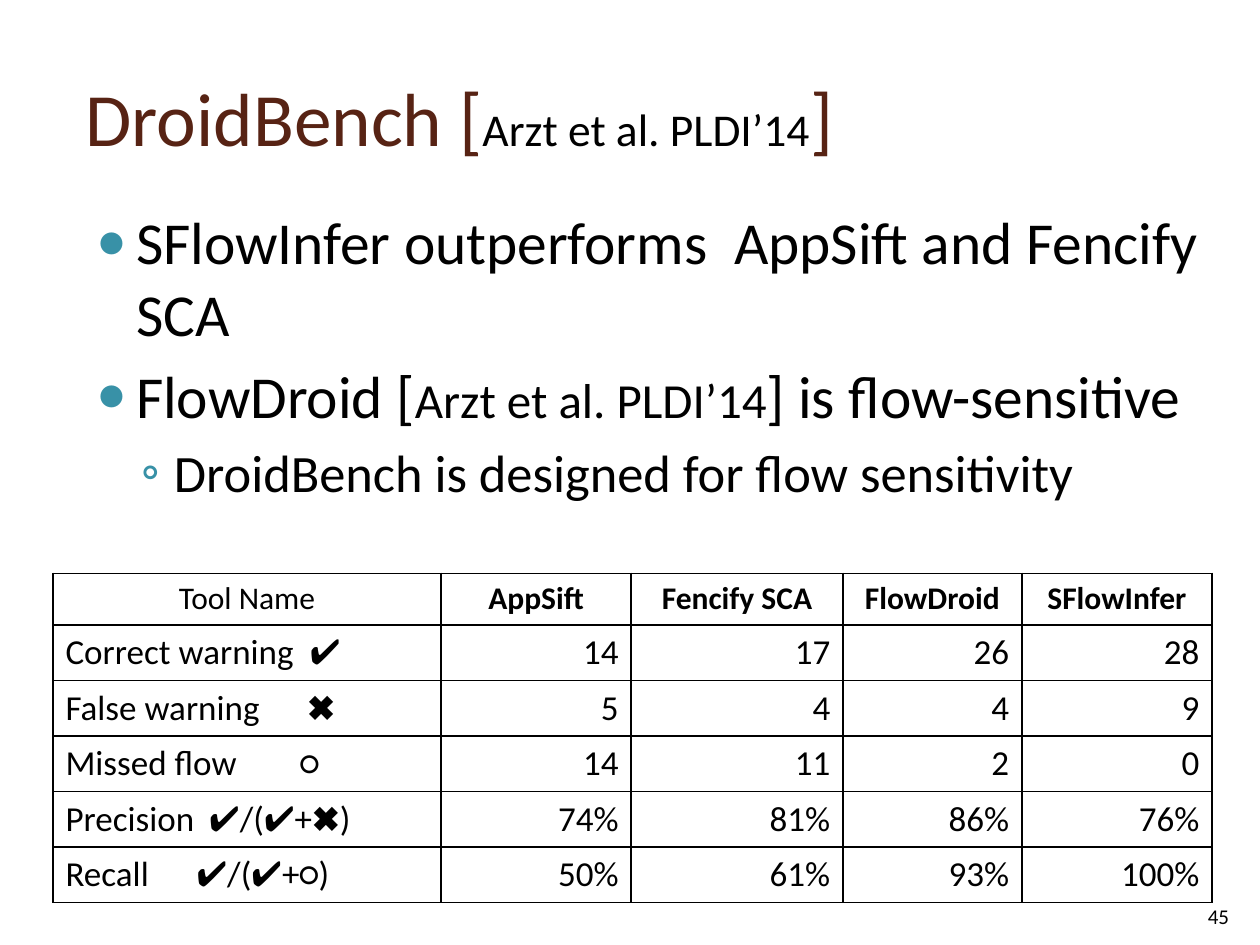
import dataclasses

import pptx
import pptx.dml.color
import pptx.enum.text
import pptx.oxml
import pptx.oxml.ns
import pptx.util
from lxml import etree

ALIGN = pptx.enum.text.PP_ALIGN
ANCHOR = pptx.enum.text.MSO_ANCHOR


@dataclasses.dataclass(frozen=True)
class Theme:
    font: str = "Calibri"
    text: str = "000000"
    heading: str = "572314"
    bullet: str = "3891A7"
    title: int = 43
    title_cite: int = 26
    body: int = 34
    body_cite: int = 28
    sub: int = 30
    header: int = 18
    cell: int = 20
    number: int = 12
    border: float = 1


def add_xml(parent, tag, **attrs):
    """Append one DrawingML element and return it."""
    return etree.SubElement(parent, pptx.oxml.ns.qn("a:" + tag), attrs)


class SlideBuilder:
    """Places elements on a grid of 100 columns by 75 rows."""

    COLS, ROWS = 100, 75

    def __init__(self, prs, theme):
        self.prs, self.theme = prs, theme
        self.slide = prs.slides.add_slide(prs.slide_layouts[1])

    def col(self, n):
        return round(self.prs.slide_width * n / self.COLS)

    def row(self, n):
        return round(self.prs.slide_height * n / self.ROWS)

    def box(self, x, y, w, h):
        return self.col(x), self.row(y), self.col(w), self.row(h)

    def place(self, sp, box, anchor):
        sp.left, sp.top, sp.width, sp.height = self.box(*box)
        tf = sp.text_frame
        tf.word_wrap = True
        tf.auto_size = pptx.enum.text.MSO_AUTO_SIZE.NONE
        tf.vertical_anchor = anchor
        return tf

    def style(self, p, size, align=ALIGN.LEFT, color=None, bold=False):
        p.alignment = align
        for r in p.runs:
            self.style_run(r, size, color, bold)

    def style_run(self, r, size, color=None, bold=False):
        r.font.name = self.theme.font
        r.font.size = pptx.util.Pt(size)
        r.font.bold = bold
        r.font.color.rgb = pptx.dml.color.RGBColor.from_string(color or self.theme.text)

    def add_runs(self, p, parts):
        """Fill a paragraph with (text, size, color) runs."""
        p.alignment = ALIGN.LEFT
        for text, size, color in parts:
            r = p.add_run()
            r.text = text
            self.style_run(r, size, color)

    def title(self, parts, box):
        tf = self.place(self.slide.shapes.title, box, ANCHOR.MIDDLE)
        self.add_runs(tf.paragraphs[0], parts)

    def bullets(self, items, box):
        tf = self.place(self.slide.placeholders[1], box, ANCHOR.TOP)
        # Per level: indent, hanging columns, space before, sign, sign size
        levels = [(4, 3.1, 6, "●", 80), (7, 2.6, 5.5, "◦", 100)]
        for i, (level, parts) in enumerate(items):
            indent, hang, before, sign, percent = levels[level]
            p = tf.add_paragraph() if i else tf.paragraphs[0]
            self.add_runs(p, parts)
            p.level = level
            p.space_before = pptx.util.Pt(before)
            pPr = p._p.get_or_add_pPr()
            pPr.set("marL", str(self.col(indent)))
            pPr.set("indent", str(-self.col(hang)))
            add_xml(add_xml(pPr, "buClr"), "srgbClr", val=self.theme.bullet)
            add_xml(pPr, "buSzPct", val=str(percent * 1000))
            add_xml(pPr, "buFont", typeface=self.theme.font)
            add_xml(pPr, "buChar", char=sign)

    def border(self, cell):
        tcPr = cell._tc.get_or_add_tcPr()
        for side in "LRTB":
            ln = add_xml(tcPr, "ln" + side, w=str(pptx.util.Pt(self.theme.border)))
            add_xml(add_xml(ln, "solidFill"), "srgbClr", val=self.theme.text)

    def table(self, header, rows, x, y, widths, row_height):
        """Rows are (label, tab stop of the symbols, values)."""
        lines = [header] + [[label, *values] for label, _, values in rows]
        frame = self.slide.shapes.add_table(
            len(lines), len(widths),
            *self.box(x, y, sum(widths), row_height * len(lines)))
        tbl = frame.table
        tbl.first_row = tbl.horz_banding = False
        for column, width in zip(tbl.columns, widths):
            column.width = self.col(width)
        for i, line in enumerate(lines):
            for j, text in enumerate(line):
                cell = tbl.cell(i, j)
                self.border(cell)
                cell.fill.background()
                p = cell.text_frame.paragraphs[0]
                p.text = text
                if i == 0:
                    self.style(p, self.theme.header, ALIGN.CENTER, bold=j > 0)
                else:
                    self.style(p, self.theme.cell, ALIGN.RIGHT if j else ALIGN.LEFT)
            if i:
                stops = add_xml(tbl.cell(i, 0).text_frame.paragraphs[0]
                                ._p.get_or_add_pPr(), "tabLst")
                add_xml(stops, "tab", pos=str(self.col(rows[i - 1][1])), algn="l")

    def page_number(self, text, box):
        sp = self.slide.shapes.add_textbox(*self.box(*box))
        tf = self.place(sp, box, ANCHOR.BOTTOM)
        tf.text = text
        self.style(tf.paragraphs[0], self.theme.number, ALIGN.CENTER)


def main():
    prs = pptx.Presentation()
    prs.slide_width, prs.slide_height = pptx.util.Inches(10), pptx.util.Inches(7.5)
    t = Theme()
    s = SlideBuilder(prs, t)
    cite = "Arzt et al. PLDI’14"

    # Title with citation
    s.title([("DroidBench [", t.title, t.heading),
             (cite, t.title_cite, t.text),
             ("]", t.title, t.heading)], (5.8, 3, 88.7, 12.5))

    # Findings
    s.bullets([
        (0, [("SFlowInfer outperforms  AppSift and Fencify SCA", t.body, t.text)]),
        (0, [("FlowDroid [", t.body, t.text),
             (cite, t.body_cite, t.text),
             ("] is flow-sensitive", t.body, t.text)]),
        (1, [("DroidBench is designed for flow sensitivity", t.sub, t.text)]),
    ], (5.8, 15.8, 92.5, 52.5))

    # Results by tool
    s.table(
        ["Tool Name", "AppSift", "Fencify SCA", "FlowDroid", "SFlowInfer"],
        [("Correct warning\t✔", 19.4, ["14", "17", "26", "28"]),
         ("False warning\t✖", 19.2, ["5", "4", "4", "9"]),
         ("Missed flow\t○", 18.6, ["14", "11", "2", "0"]),
         ("Precision\t✔/(✔+✖)", 11.4, ["74%", "81%", "86%", "76%"]),
         ("Recall\t✔/(✔+○)", 10.4, ["50%", "61%", "93%", "100%"])],
        4.2, 45.5, [30.8, 15.1, 16.8, 14.2, 15.1], 4.1)

    # Page number
    s.page_number("45", (94.2, 69, 5, 5.2))
    prs.save("out.pptx")


if __name__ == "__main__":
    main()
